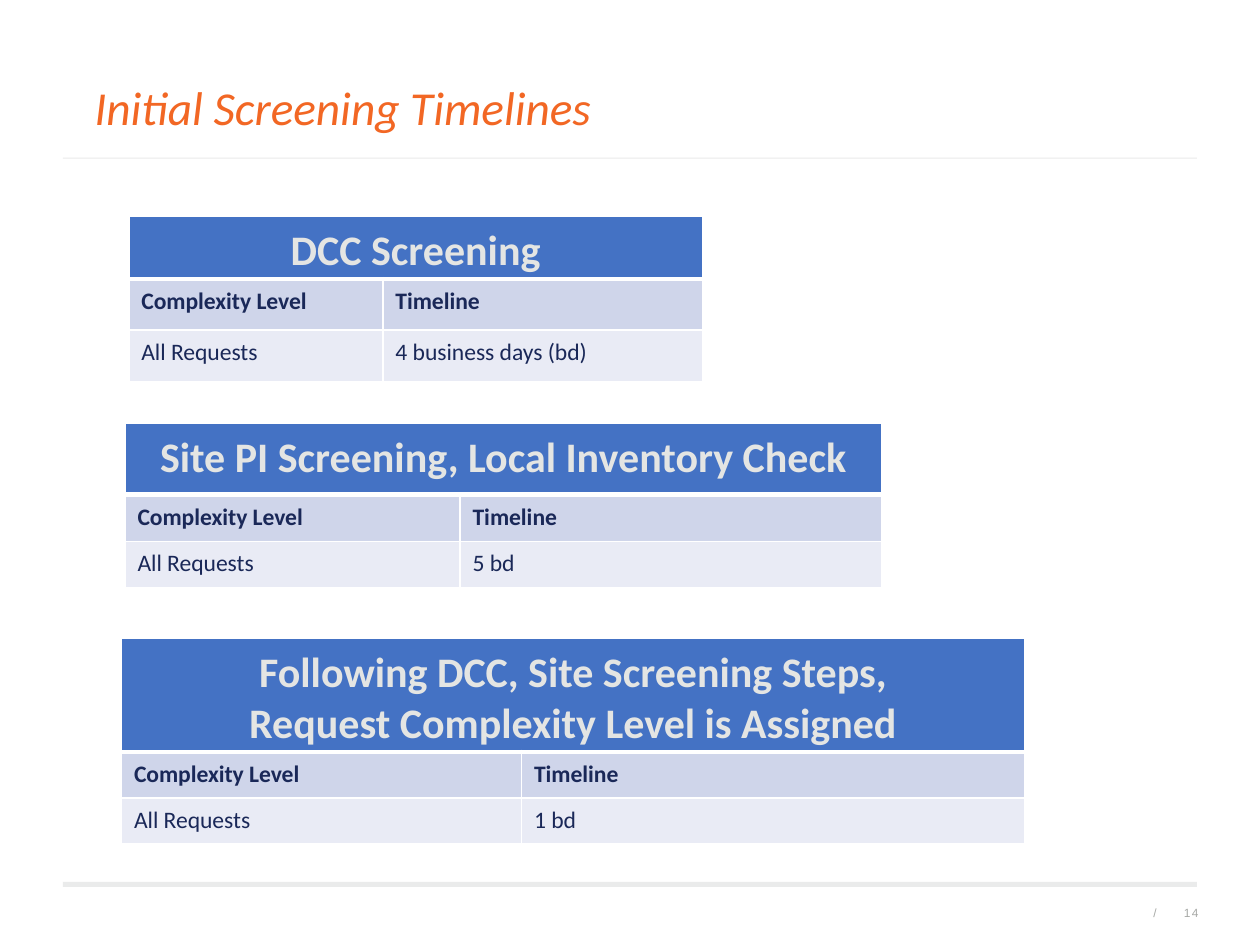
import pptx
import pptx.util
import pptx.dml.color
import pptx.enum.shapes
import pptx.enum.text
import pptx.oxml
import pptx.oxml.ns

Pt = pptx.util.Pt
Align = pptx.enum.text.PP_ALIGN
Middle = pptx.enum.text.MSO_ANCHOR.MIDDLE


def color(hex_string):
    return pptx.dml.color.RGBColor.from_string(hex_string)


def add_run(para, text, name, size, hex_string, bold=False, italic=False):
    span = para.add_run()
    span.text = text
    span.font.name = name
    span.font.size = Pt(size)
    span.font.bold = bold
    span.font.italic = italic
    span.font.color.rgb = color(hex_string)
    return span


deck = pptx.Presentation()
deck.slide_width, deck.slide_height = Pt(720), Pt(540)
page = deck.slides.add_slide(deck.slide_layouts[5])

for top, height in [(504, 2.9), (90, 0.7)]:
    rule = page.shapes.add_shape(pptx.enum.shapes.MSO_SHAPE.RECTANGLE, Pt(36), Pt(top), Pt(648), Pt(height))
    rule.shadow.inherit = False
    rule.fill.solid()
    rule.fill.fore_color.rgb = color("EAEBEB")
    rule.line.fill.background()

title = page.shapes.title
title.left, title.top, title.width, title.height = Pt(54), Pt(39), Pt(468), Pt(44)
frames = [title.text_frame]
add_run(title.text_frame.paragraphs[0], "Initial Screening Timelines", "Calibri", 27, "F26724", italic=True)
title.text_frame.paragraphs[0].alignment = Align.LEFT

for left, text in [(633.6, "/"), (657.4, "14")]:
    box = page.shapes.add_textbox(Pt(left), Pt(513.4), Pt(27.4), Pt(18))
    frames.append(box.text_frame)
    para = box.text_frame.paragraphs[0]
    para.alignment = Align.RIGHT
    para.line_spacing = 0.8
    para.space_after = Pt(4.5)
    span = add_run(para, text, "Arial", 6.8, "A7A9A6")
    span.font._element.set("spc", "80")

for frame in frames:
    frame.margin_left = frame.margin_top = frame.margin_right = frame.margin_bottom = 0
    frame.vertical_anchor = Middle
    frame.word_wrap = frame is not title.text_frame

tables = [
    (73.6, 123.3, (145.2, 182.6), (36, 29.2, 29.2), ["DCC Screening"], "4 business days (bd)"),
    (71.4, 241.9, (191.5, 241), (40.8, 26.6, 26.6), ["Site PI Screening, Local Inventory Check"], "5 bd"),
    (69.4, 364.5, (228.6, 287.6), (65, 26.4, 26.4),
     ["Following DCC, Site Screening Steps,", "Request Complexity Level is Assigned"], "1 bd"),
]
fills = ["4472C4", "CFD5EA", "E9EBF5"]

for left, top, widths, heights, heading, timeline in tables:
    table = page.shapes.add_table(3, 2, Pt(left), Pt(top), Pt(sum(widths)), Pt(sum(heights))).table
    table.horz_banding = False
    for column, width in zip(table.columns, widths):
        column.width = Pt(width)
    for row, height in zip(table.rows, heights):
        row.height = Pt(height)
    table.cell(0, 0).merge(table.cell(0, 1))

    contents = [[heading, []], [["Complexity Level"], ["Timeline"]], [["All Requests"], [timeline]]]
    for row_index, row_texts in enumerate(contents):
        is_header = row_index == 0
        for column_index, lines in enumerate(row_texts):
            cell = table.cell(row_index, column_index)
            cell.margin_top = Pt(9.5 if is_header else 6.9)
            edges = {"L": 1, "R": 1, "T": 3 if row_index == 1 else 1, "B": 3 if is_header else 1}
            for edge, weight in edges.items():
                cell._tc.get_or_add_tcPr().append(pptx.oxml.parse_xml(
                    f'<a:ln{edge} {pptx.oxml.ns.nsdecls("a")} w="{Pt(weight)}"><a:solidFill>'
                    f'<a:srgbClr val="FFFFFF"/></a:solidFill></a:ln{edge}>'))
            cell.fill.solid()
            cell.fill.fore_color.rgb = color(fills[row_index])
            for line_index, text in enumerate(lines):
                frame = cell.text_frame
                para = frame.add_paragraph() if line_index else frame.paragraphs[0]
                para.line_spacing = 0.8
                if line_index:
                    para.space_before = Pt(5.9)
                para.alignment = Align.CENTER if is_header else Align.LEFT
                add_run(para, text, "Calibri", 24 if is_header else 13.5,
                        "E4E5E3" if is_header else "1A2858", bold=row_index < 2)

deck.save("out.pptx")
